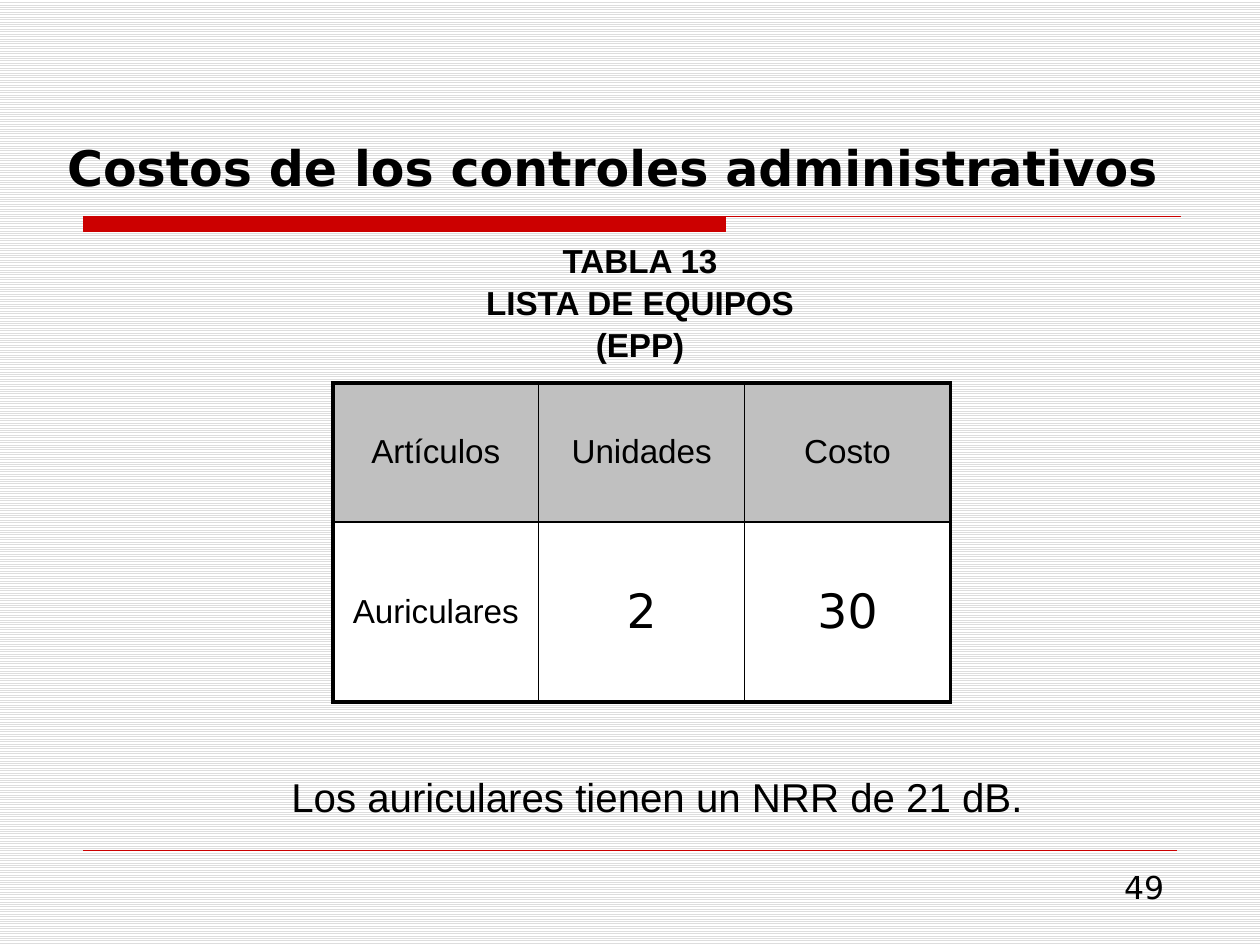
"""Builds the slide on the costs of administrative controls."""
import pptx
import pptx.dml.color
import pptx.enum.dml
import pptx.enum.text
import pptx.oxml
import pptx.oxml.ns
import pptx.util

Cm, Pt = pptx.util.Cm, pptx.util.Pt
ALIGN, ANCHOR = pptx.enum.text.PP_ALIGN, pptx.enum.text.MSO_ANCHOR

COLORS = {"red": "CC0000", "black": "000000", "white": "FFFFFF",
          "gray": "C0C0C0", "stripe": "DDDDDD"}

TITLE = "Costos de los controles administrativos"
TITLE_BOX = (1.1, 2.31, 22.86, 1.78)
TITLE_FORMAT = {"name": "DejaVu Sans", "size": Pt(28), "bold": True}

BODY_FORMAT = {"name": "Arial", "size": Pt(19), "bold": False}
VALUE_FORMAT = {"name": "DejaVu Sans", "size": Pt(27), "bold": False}

TEXTS = [
    {"lines": ["TABLA 13", "LISTA DE EQUIPOS (EPP)"], "box": (8.64, 5.13, 8.53, 1.9),
     "font": {**BODY_FORMAT, "bold": True},
     "paragraph": {"alignment": ALIGN.CENTER, "line_spacing": 1.05},
     "anchor": ANCHOR.MIDDLE},
    {"lines": ["Los auriculares tienen un NRR de 21 dB."], "box": (3.66, 15.44, 19.2, 1.3),
     "font": {**BODY_FORMAT, "size": Pt(23)},
     "paragraph": {"alignment": ALIGN.CENTER}, "anchor": ANCHOR.TOP},
    {"lines": ["49"], "box": (18.21, 17.37, 5.51, 1.32),
     "font": {**VALUE_FORMAT, "size": Pt(18)},
     "paragraph": {"alignment": ALIGN.RIGHT}, "anchor": ANCHOR.TOP},
]

ROWS = [["Artículos", "Unidades", "Costo"], ["Auriculares", "2", "30"]]
TABLE_POS = (6.71, 7.72)
COL_WIDTH, ROW_HEIGHTS = 4.15, (2.8, 3.63)
OUTER, INNER = 2.25, 1

RULE_LEFT, RULE_RIGHT, BAR_RIGHT = 1.68, 23.8, 14.63
BAR_TOP, BAR_BOTTOM = 4.36, 4.67
FOOTER_LINE = (1.68, 17.14, 23.72, 17.14)


def rgb(name):
    return pptx.dml.color.RGBColor.from_string(COLORS[name])


def cms(values):
    return [Cm(v) for v in values]


def apply(target, values):
    for key, value in values.items():
        setattr(target, key, value)


def write(tf, lines, font, paragraph):
    for i, line in enumerate(lines):
        p = tf.paragraphs[0] if i == 0 else tf.add_paragraph()
        apply(p, paragraph)
        r = p.add_run()
        r.text = line
        apply(r.font, font)
        r.font.color.rgb = rgb("black")


def xml(body):
    ns = pptx.oxml.ns.nsdecls("a")
    return pptx.oxml.parse_xml(body.replace(">", f" {ns}>", 1))


def add_title(s):
    sp = s.shapes.title
    apply(sp, dict(zip(("left", "top", "width", "height"), cms(TITLE_BOX))))
    tf = sp.text_frame
    apply(tf, {"vertical_anchor": ANCHOR.BOTTOM, "word_wrap": True,
               "auto_size": pptx.enum.text.MSO_AUTO_SIZE.NONE})
    write(tf, [TITLE], TITLE_FORMAT, {"alignment": ALIGN.LEFT})
    fill = tf.paragraphs[0].runs[0].font.fill._xPr.find(pptx.oxml.ns.qn("a:solidFill"))
    fill.addnext(xml(
        '<a:effectLst><a:outerShdw dist="35921" dir="2700000">'
        f'<a:srgbClr val="{COLORS["gray"]}"/></a:outerShdw></a:effectLst>'))


def add_rules(s):
    builder = s.shapes.build_freeform(Cm(RULE_LEFT), Cm(BAR_TOP))
    corners = [(BAR_RIGHT, BAR_TOP), (BAR_RIGHT, BAR_BOTTOM), (RULE_LEFT, BAR_BOTTOM)]
    builder.add_line_segments([cms(c) for c in corners], close=True)
    builder.move_to(Cm(RULE_LEFT), Cm(BAR_TOP))
    builder.add_line_segments([cms((RULE_RIGHT, BAR_TOP))], close=False)
    sp = builder.convert_to_shape()
    sp.shadow.inherit = False
    sp.fill.solid()
    sp.fill.fore_color.rgb = rgb("red")
    footer = s.shapes.add_connector(pptx.enum.shapes.MSO_CONNECTOR.STRAIGHT, *cms(FOOTER_LINE))
    footer._element.spPr.append(xml("<a:effectLst></a:effectLst>"))
    for shape, width in ((sp, 0.75), (footer, 0.25)):
        shape.line.color.rgb = rgb("red")
        shape.line.width = Pt(width)


def add_equipment_table(s):
    n_rows, n_cols = len(ROWS), len(ROWS[0])
    size = (COL_WIDTH * n_cols, sum(ROW_HEIGHTS))
    table = s.shapes.add_table(n_rows, n_cols, *cms(TABLE_POS + size)).table
    for col in table.columns:
        col.width = Cm(COL_WIDTH)
    for i, texts in enumerate(ROWS):
        table.rows[i].height = Cm(ROW_HEIGHTS[i])
        for j, text in enumerate(texts):
            cell = table.cell(i, j)
            edges = {"L": j == 0, "R": j == n_cols - 1, "T": i == 0, "B": i == n_rows - 1}
            for side, outer in edges.items():
                cell._tc.get_or_add_tcPr().append(xml(
                    f'<a:ln{side} w="{Pt(OUTER if outer else INNER)}"><a:solidFill>'
                    f'<a:srgbClr val="{COLORS["black"]}"/></a:solidFill></a:ln{side}>'))
            cell.fill.solid()
            cell.fill.fore_color.rgb = rgb("white" if i else "gray")
            cell.vertical_anchor = ANCHOR.MIDDLE
            font = VALUE_FORMAT if text.isdigit() else BODY_FORMAT
            write(cell.text_frame, [text], font, {"alignment": ALIGN.CENTER})


def main():
    prs = pptx.Presentation()
    apply(prs, {"slide_width": Cm(25.4), "slide_height": Cm(19.05)})
    s = prs.slides.add_slide(prs.slide_layouts[5])
    fill = s.background.fill
    fill.patterned()
    fill.pattern = pptx.enum.dml.MSO_PATTERN.LIGHT_HORIZONTAL
    fill.fore_color.rgb = rgb("stripe")
    fill.back_color.rgb = rgb("white")
    add_rules(s)
    add_title(s)
    add_equipment_table(s)
    for item in TEXTS:
        tf = s.shapes.add_textbox(*cms(item["box"])).text_frame
        apply(tf, {"word_wrap": True, "vertical_anchor": item["anchor"]})
        write(tf, item["lines"], item["font"], item["paragraph"])
    prs.save("out.pptx")


if __name__ == "__main__":
    main()
